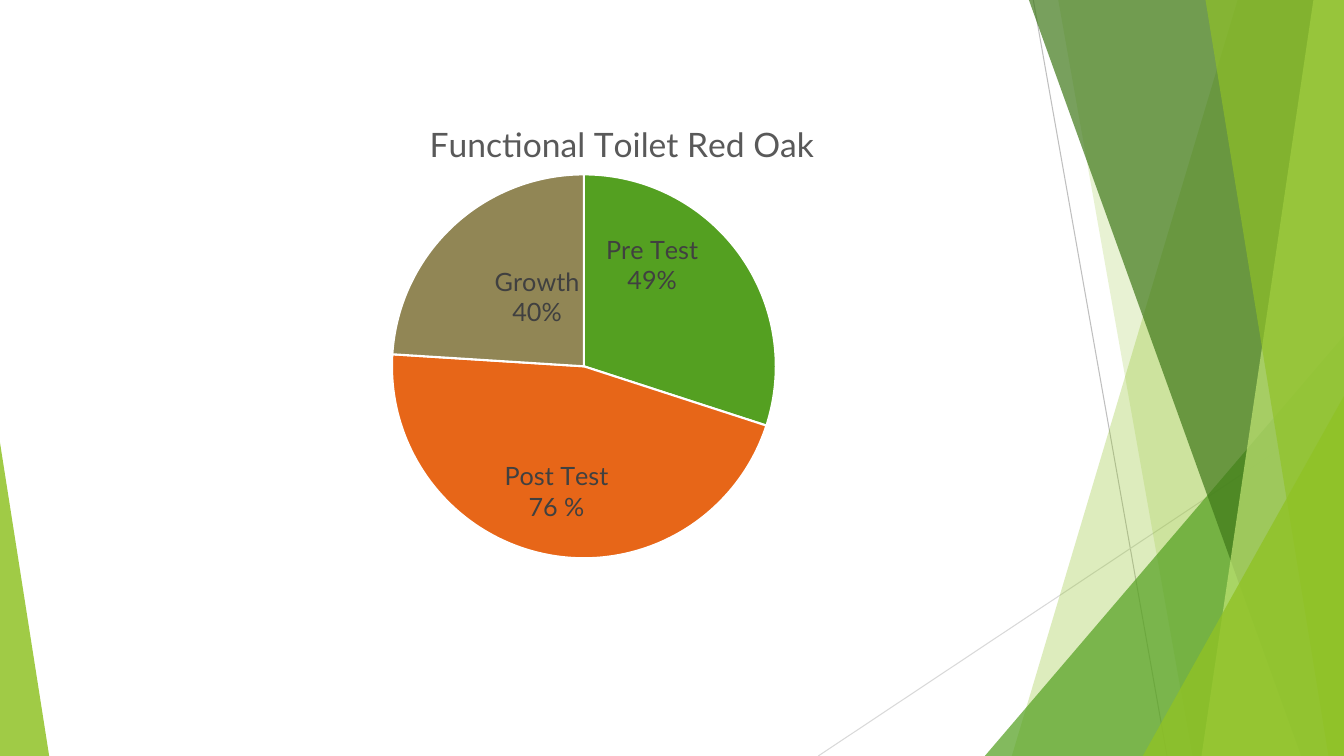
from lxml import etree
from pptx import Presentation
from pptx.chart.data import CategoryChartData
from pptx.dml.color import RGBColor
from pptx.enum.chart import XL_CHART_TYPE as Chart, XL_LABEL_POSITION as LabelPos
from pptx.enum.shapes import MSO_CONNECTOR as Connector, MSO_SHAPE as Shape
from pptx.oxml.ns import qn
from pptx.util import Cm, Pt

WIDTH, HEIGHT = 33.87, 19.05
FONT = "Lato"
LINES = [
    (26.04, 0, 29.41, HEIGHT, "BFBFBF"),
    (WIDTH, 10.24, 20.62, HEIGHT, "D9D9D9"),
]
FACETS = [
    ("band", (31.19, 25.5), "90C226", 30),
    ("band", (26.67, 30.05), "90C226", 20),
    ("triangle", (24.82, 8.46, 9.05, 1), "54A021", 72),
    ("band", (25.93, 32.79), "3F7819", 70),
    ("band", (33.1, 30.28), "C0E474", 70),
    ("band", (30.38, 33.48), "90C226", 65),
    ("triangle", (28.8, 9.98, 5.07, 1), "90C226", 80),
    ("triangle", (0, 11.15, 1.24, 0), "90C226", 85),
]
TITLE = "Functional Toilet Red Oak"
CHART_BOX = (1.88, 2.74, 23.77, 12.73)
TITLE_PLACE = {"x": 0.37, "y": 0.01}
PLOT_PLACE = {"layoutTarget": "inner", "xMode": "edge", "yMode": "edge",
              "x": 0.33, "y": 0.13, "w": 0.42, "h": 0.76}
SLICES = [
    ("1", 30, "54A021", ("Pre Test", "49%"), (-0.01, -0.09)),
    ("2", 46, "E76618", ("Post Test", "76 %"), (-0.01, 0.06)),
    ("3", 24, "918655", ("Growth", "40%"), (0.02, 0)),
]


def rgb(value):
    return RGBColor.from_string(value)


def style_text(p, size, color):
    p.font.size = Pt(size)
    p.font.name = FONT
    p.font.bold = False
    p.font.color.rgb = rgb(color)


def place(parent, index, values):
    for old in parent.findall(qn("c:layout")):
        parent.remove(old)
    layout = etree.Element(qn("c:layout"))
    manual = etree.SubElement(layout, qn("c:manualLayout"))
    for key, value in values.items():
        etree.SubElement(manual, qn(f"c:{key}")).set("val", str(value))
    parent.insert(index, layout)


def add_line(s, x1, y1, x2, y2, color):
    line = s.shapes.add_connector(Connector.STRAIGHT, Cm(x1), Cm(y1), Cm(x2), Cm(y2))
    line.line.color.rgb = rgb(color)
    line.line.width = Pt(0.75)
    etree.SubElement(line._element.spPr, qn("a:effectLst"))


def add_facet(s, kind, geometry, color, opacity):
    if kind == "band":
        top, bottom = geometry
        corners = [(WIDTH, 0), (WIDTH, HEIGHT), (bottom, HEIGHT)]
        builder = s.shapes.build_freeform(Cm(top), 0)
        builder.add_line_segments([(Cm(x), Cm(y)) for x, y in corners])
        sp = builder.convert_to_shape()
    else:
        left, top, width, apex = geometry
        sp = s.shapes.add_shape(Shape.ISOSCELES_TRIANGLE, Cm(left), Cm(top),
                                Cm(width), Cm(HEIGHT - top))
        sp.adjustments[0] = apex
    sp.shadow.inherit = False
    sp.line.fill.background()
    sp.fill.solid()
    sp.fill.fore_color.rgb = rgb(color)
    fill = sp._element.spPr.find(qn("a:solidFill"))
    etree.SubElement(fill[0], qn("a:alpha")).set("val", str(opacity * 1000))


def add_pie(s):
    data = CategoryChartData()
    data.categories = [row[0] for row in SLICES]
    data.add_series("Series 1", [row[1] for row in SLICES])
    chart = s.shapes.add_chart(Chart.PIE, *map(Cm, CHART_BOX), data).chart
    chart.has_legend = False
    chart.font.name = FONT
    chart.font.size = Pt(10)
    chart.has_title = True
    title = chart.chart_title.text_frame.paragraphs[0]
    title.text = TITLE
    style_text(title, 24, "595959")

    root = chart._chartSpace
    edges = {"xMode": "edge", "yMode": "edge"}
    place(root.find(".//" + qn("c:title")), 1, {**edges, **TITLE_PLACE})
    place(root.find(".//" + qn("c:plotArea")), 0, PLOT_PLACE)

    points = chart.plots[0].series[0].points
    for i, (_, _, color, lines, _) in enumerate(SLICES):
        point = points[i]
        point.format.fill.solid()
        point.format.fill.fore_color.rgb = rgb(color)
        point.format.line.color.rgb = rgb("FFFFFF")
        point.format.line.width = Pt(1.5)
        tf = point.data_label.text_frame
        for j, text in enumerate(lines):
            p = tf.add_paragraph() if j else tf.paragraphs[0]
            p.text = text
            style_text(p, 18, "404040")
        point.data_label.position = LabelPos.CENTER
    for label, row in zip(root.iter(qn("c:dLbl")), SLICES):
        place(label, 1, dict(zip("xy", row[4])))


prs = Presentation()
prs.slide_width, prs.slide_height = Cm(WIDTH), Cm(HEIGHT)
s = prs.slides.add_slide(prs.slide_layouts[6])
for line in LINES:
    add_line(s, *line)
for facet in FACETS:
    add_facet(s, *facet)
add_pie(s)
prs.save("out.pptx")
